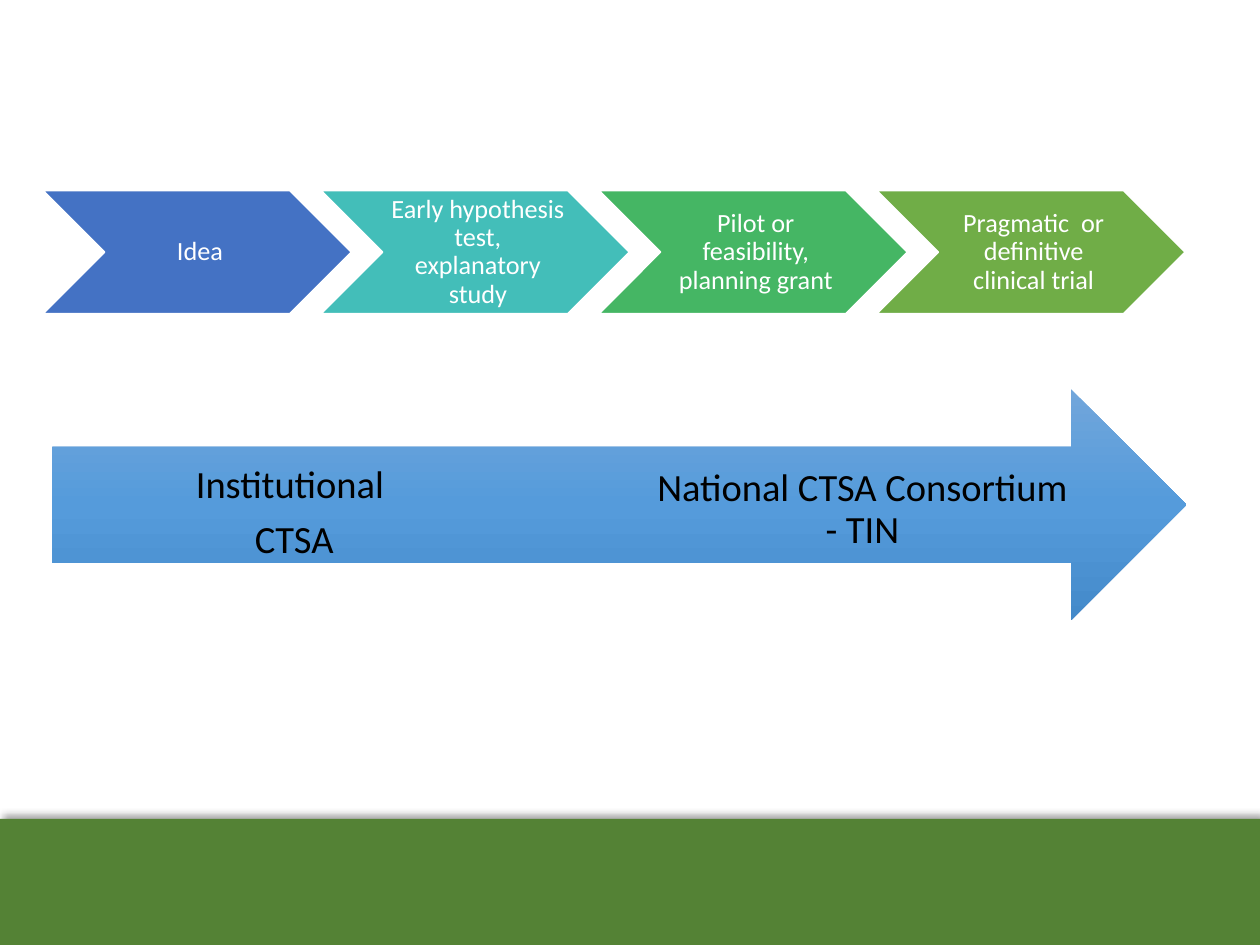
import copy

import lxml.etree
import pptx
import pptx.dml.color
import pptx.enum.shapes
import pptx.enum.text
import pptx.oxml
import pptx.oxml.ns
import pptx.util

Pt = pptx.util.Pt
SHAPE = pptx.enum.shapes.MSO_SHAPE

# Content
STAGES = [
    ("Idea", "4472C4"),
    ("Early hypothesis test, explanatory study", "43BEB9"),
    ("Pilot or feasibility, planning grant", "45B664"),
    ("Pragmatic  or definitive clinical trial", "70AD47"),
]
# Paragraphs, then left, top, width, height
ARROW_LABELS = [
    (["National CTSA Consortium - TIN"], (372.2, 228.2, 241.2, 126.7)),
    (["Institutional ", "CTSA"], (47.5, 246.2, 241.2, 95)),
]
ARROW_STOPS = [(0, "71A6DB"), (0.5, "559BDB"), (1, "448ACA")]

# Layout in points
PAGE_WIDTH, PAGE_HEIGHT, FOOTER_HEIGHT = 720, 540, 72
STAGE_LEFT, STAGE_TOP = 24.5, 108.8
STAGE_WIDTH, STAGE_HEIGHT, STAGE_STEP = 176.4, 70.56, 158.8
ARROW = (30, 222.5, 648, 131.8)

FOOTER_SHADOW = (
    '<a:effectLst %s><a:outerShdw blurRad="50800" dist="38100" dir="18900000" rotWithShape="0">'
    '<a:srgbClr val="000000"><a:alpha val="40000"/></a:srgbClr>'
    '</a:outerShdw></a:effectLst>' % pptx.oxml.ns.nsdecls("a")
)


def color(value):
    return pptx.dml.color.RGBColor.from_string(value)


def add_shape(page, kind, frame, fill=None):
    shape = page.shapes.add_shape(kind, *map(Pt, frame))
    shape.shadow.inherit = False
    shape.line.fill.background()
    if fill:
        shape.fill.solid()
        shape.fill.fore_color.rgb = color(fill)
    return shape


def add_label(page, lines, frame, size, font_color, insets):
    box = page.shapes.add_textbox(*map(Pt, frame))
    text = box.text_frame
    text.word_wrap = True
    text.vertical_anchor = pptx.enum.text.MSO_ANCHOR.MIDDLE
    text.margin_left, text.margin_top, text.margin_right, text.margin_bottom = map(Pt, insets)
    for index, line in enumerate(lines):
        para = text.add_paragraph() if index else text.paragraphs[0]
        para.alignment = pptx.enum.text.PP_ALIGN.CENTER
        para.line_spacing = 0.9
        para.space_after = Pt(0.35 * size)
        span = para.add_run()
        span.text = line
        span.font.name = "Calibri"
        span.font.size = Pt(size)
        span.font.color.rgb = color(font_color)


def set_gradient(shape, stops):
    shape.fill.gradient()
    shape.fill.gradient_angle = 270
    stop_list = next(shape._element.iter(pptx.oxml.ns.qn("a:gsLst")))
    while len(stop_list) < len(stops):
        stop_list.append(copy.deepcopy(stop_list[0]))
    for stop, (position, value) in zip(shape.fill.gradient_stops, stops):
        stop.position = position
        stop.color.rgb = color(value)


def main():
    deck = pptx.Presentation()
    deck.slide_width, deck.slide_height = Pt(PAGE_WIDTH), Pt(PAGE_HEIGHT)
    page = deck.slides.add_slide(deck.slide_layouts[6])

    # Footer band with a soft shadow above it
    frame = (0, PAGE_HEIGHT - FOOTER_HEIGHT, PAGE_WIDTH, FOOTER_HEIGHT)
    footer = add_shape(page, SHAPE.RECTANGLE, frame, "548235")
    properties = footer._element.spPr
    empty_effects = properties.find(pptx.oxml.ns.qn("a:effectLst"))
    properties.replace(empty_effects, pptx.oxml.parse_xml(FOOTER_SHADOW))

    # Row of stages; each label sits between the chevron's notches
    notch = STAGE_HEIGHT / 2
    for index, (name, fill) in enumerate(STAGES):
        left = STAGE_LEFT + index * STAGE_STEP
        chevron = add_shape(page, SHAPE.CHEVRON, (left, STAGE_TOP, STAGE_WIDTH, STAGE_HEIGHT), fill)
        chevron.line.color.rgb = color("FFFFFF")
        chevron.line.width = Pt(1)
        frame = (left + notch, STAGE_TOP, STAGE_WIDTH - 2 * notch, STAGE_HEIGHT)
        add_label(page, [name], frame, 15, "FFFFFF", (4.8, 1.6, 1.6, 1.6))

    # Support arrow with its labels
    arrow = add_shape(page, SHAPE.RIGHT_ARROW, ARROW)
    set_gradient(arrow, ARROW_STOPS)
    for lines, frame in ARROW_LABELS:
        add_label(page, lines, frame, 22, "000000", (0, 17.3, 0, 17.3))

    deck.save("out.pptx")


if __name__ == "__main__":
    main()
